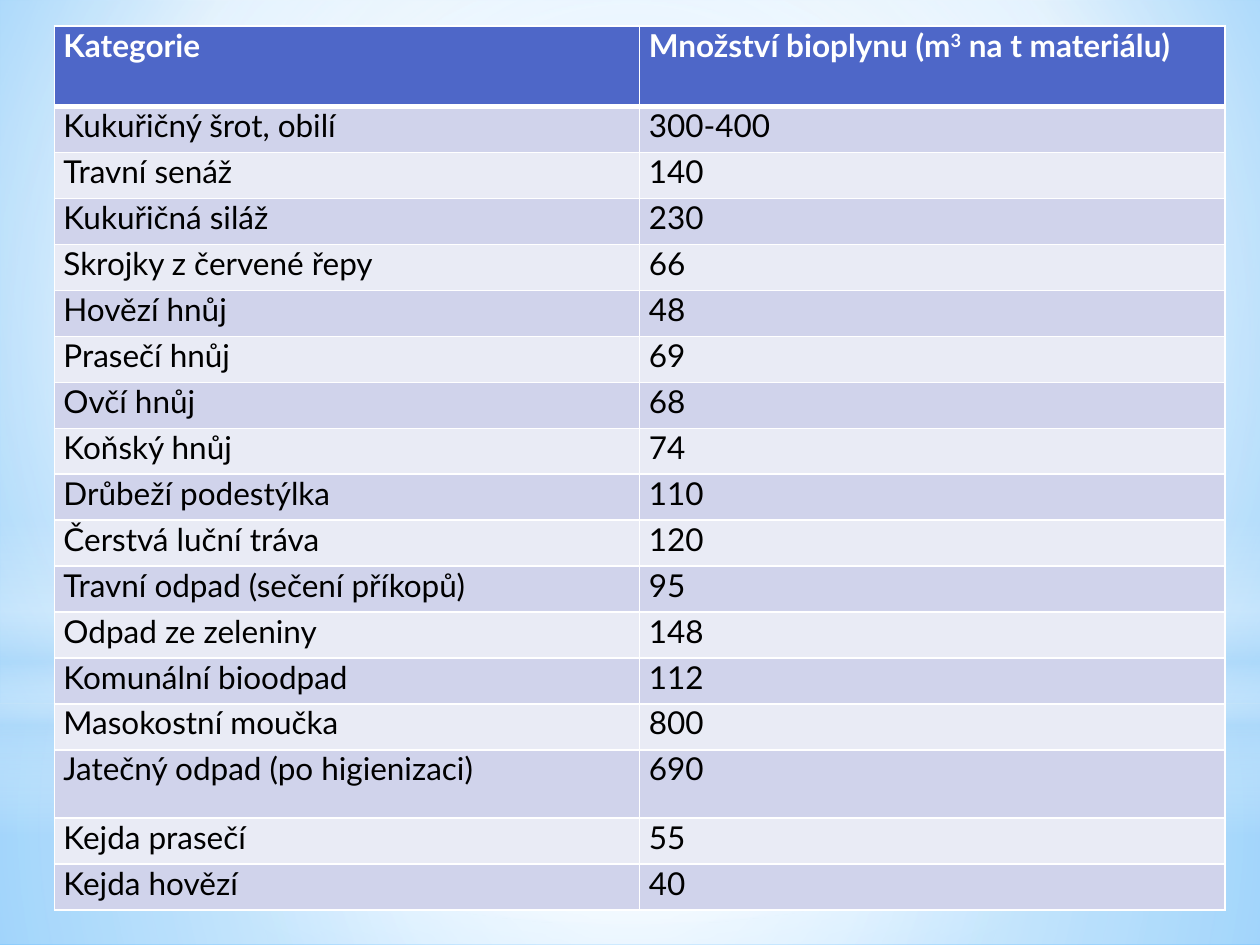
from dataclasses import dataclass
from typing import NamedTuple

from lxml import etree
from pptx import Presentation
from pptx.dml.color import RGBColor
from pptx.enum.shapes import MSO_SHAPE
from pptx.enum.text import PP_ALIGN
from pptx.oxml.ns import qn
from pptx.util import Pt

RECTANGLE = MSO_SHAPE.RECTANGLE
OVAL = MSO_SHAPE.OVAL
JUSTIFY = PP_ALIGN.JUSTIFY
BLANK_LAYOUT = 6


@dataclass(frozen=True)
class Theme:
    font: str = "Lato"
    text_size: float = 18
    header_text: str = "FFFFFF"
    body_text: str = "000000"
    header_fill: str = "4E67C8"
    band_fills: tuple[str, str] = ("D0D3EB", "E9EBF5")
    border: str = "FFFFFF"
    thin_border: float = 1
    thick_border: float = 3
    glow: str = "FFFFFF"
    haze: str = "B4DCFA"
    sky_light: str = "9ED5FF"
    sky_deep: str = "5BB9FF"


THEME = Theme()


class Stop(NamedTuple):
    position: int
    color: str
    opacity: int = 100


class Gradient(NamedTuple):
    """Circular around the focus (left, top, right, bottom in percent), or linear at angle."""
    stops: tuple[Stop, ...]
    focus: tuple[int, int, int, int] = (50, 50, 50, 50)
    angle: int | None = None


class Layer(NamedTuple):
    preset: MSO_SHAPE
    top: float
    height: float
    gradient: Gradient


class Material(NamedTuple):
    name: str
    biogas: str
    height: float = 26.25


SLIDE_WIDTH, SLIDE_HEIGHT = 720, 540
TABLE_LEFT, TABLE_TOP = 31, 15
COLUMN_WIDTH = 334.5
HEADER_HEIGHT = 46
CELL_MARGIN = 5.25

SKY = Gradient((Stop(0, THEME.sky_light), Stop(60, THEME.glow), Stop(100, THEME.sky_deep)),
               focus=(20, 10, 20, 60))

LAYERS = (
    Layer(RECTANGLE, 402, 138, Gradient((
        Stop(0, THEME.glow, 91), Stop(37, THEME.glow, 76), Stop(100, THEME.haze, 79)))),
    Layer(RECTANGLE, 0, 402, Gradient((
        Stop(0, THEME.glow, 89), Stop(48, THEME.glow, 62), Stop(100, THEME.haze, 79)))),
    Layer(RECTANGLE, 297, 180, Gradient((
        Stop(0, THEME.glow, 0), Stop(29, THEME.glow, 30), Stop(45, THEME.haze, 40),
        Stop(55, THEME.glow, 26), Stop(65, THEME.haze, 60), Stop(100, THEME.glow, 0)), angle=90)),
    Layer(OVAL, 126, 402, Gradient((Stop(0, THEME.glow), Stop(56, THEME.glow, 0)))),
)

# Each header is a list of (text, is superscript)
HEADERS = (
    [("Kategorie", False)],
    [("Množství bioplynu (m", False), ("3", True), (" na t materiálu)", False)],
)

MATERIALS = (
    Material("Kukuřičný šrot, obilí", "300-400"),
    Material("Travní senáž", "140"),
    Material("Kukuřičná siláž", "230"),
    Material("Skrojky z červené řepy", "66"),
    Material("Hovězí hnůj", "48"),
    Material("Prasečí hnůj", "69"),
    Material("Ovčí hnůj", "68"),
    Material("Koňský hnůj", "74"),
    Material("Drůbeží podestýlka", "110"),
    Material("Čerstvá luční tráva", "120"),
    Material("Travní odpad (sečení příkopů)", "95"),
    Material("Odpad ze zeleniny", "148"),
    Material("Komunální bioodpad", "112"),
    Material("Masokostní moučka", "800"),
    Material("Jatečný odpad (po higienizaci)", "690", height=39),
    Material("Kejda prasečí", "55"),
    Material("Kejda hovězí", "40"),
)


def add_element(parent, tag: str, **attributes):
    return etree.SubElement(parent, qn(tag), {key: str(value) for key, value in attributes.items()})


def apply_gradient(fill, owner, gradient: Gradient) -> None:
    """Fill with the gradient; owner is the XML element that holds the fill."""
    fill.gradient()
    element = owner.find(".//" + qn("a:gradFill"))
    for child in list(element):
        element.remove(child)
    stop_list = add_element(element, "a:gsLst")
    for stop in gradient.stops:
        stop_element = add_element(stop_list, "a:gs", pos=stop.position * 1000)
        color = add_element(stop_element, "a:srgbClr", val=stop.color)
        if stop.opacity < 100:
            add_element(color, "a:alpha", val=stop.opacity * 1000)
    if gradient.angle is not None:
        add_element(element, "a:lin", ang=gradient.angle * 60000, scaled=0)
    else:
        circle = add_element(element, "a:path", path="circle")
        sides = {side: value * 1000 for side, value in zip("ltrb", gradient.focus)}
        add_element(circle, "a:fillToRect", **sides)


def add_layer(slide, layer: Layer) -> None:
    shape = slide.shapes.add_shape(layer.preset, 0, Pt(layer.top), Pt(SLIDE_WIDTH), Pt(layer.height))
    shape.shadow.inherit = False
    shape.line.fill.background()
    apply_gradient(shape.fill, shape.element.spPr, layer.gradient)


def set_borders(cell, top: float, bottom: float) -> None:
    properties = cell._tc.get_or_add_tcPr()
    thin = THEME.thin_border
    widths = (("a:lnL", thin), ("a:lnR", thin), ("a:lnT", top), ("a:lnB", bottom))
    for tag, width in widths:
        line = add_element(properties, tag, w=int(Pt(width)))
        add_element(add_element(line, "a:solidFill"), "a:srgbClr", val=THEME.border)


def format_cell(cell, fill: str, text_color: str, bold: bool, top: float, bottom: float) -> None:
    set_borders(cell, top, bottom)
    cell.fill.solid()
    cell.fill.fore_color.rgb = RGBColor.from_string(fill)
    cell.margin_left = cell.margin_right = Pt(CELL_MARGIN)
    cell.margin_top = cell.margin_bottom = 0
    paragraph = cell.text_frame.paragraphs[0]
    paragraph.alignment = JUSTIFY
    font = paragraph.font
    font.name, font.size, font.bold = THEME.font, Pt(THEME.text_size), bold
    font.color.rgb = RGBColor.from_string(text_color)


def add_biogas_table(slide) -> None:
    heights = [HEADER_HEIGHT] + [material.height for material in MATERIALS]
    table = slide.shapes.add_table(
        len(heights), len(HEADERS), Pt(TABLE_LEFT), Pt(TABLE_TOP),
        Pt(COLUMN_WIDTH * len(HEADERS)), Pt(sum(heights))).table
    for column in table.columns:
        column.width = Pt(COLUMN_WIDTH)
    for row, height in zip(table.rows, heights):
        row.height = Pt(height)

    thin, thick = THEME.thin_border, THEME.thick_border
    for cell, parts in zip(table.rows[0].cells, HEADERS):
        for text, is_superscript in parts:
            run = cell.text_frame.paragraphs[0].add_run()
            run.text = text
            if is_superscript:
                run._r.get_or_add_rPr().set("baseline", "30000")
        format_cell(cell, THEME.header_fill, THEME.header_text, True, thin, thick)

    for index, material in enumerate(MATERIALS):
        top = thick if index == 0 else thin
        for cell, text in zip(table.rows[index + 1].cells, (material.name, material.biogas)):
            cell.text = text
            format_cell(cell, THEME.band_fills[index % 2], THEME.body_text, False, top, thin)


def main() -> None:
    presentation = Presentation()
    presentation.slide_width, presentation.slide_height = Pt(SLIDE_WIDTH), Pt(SLIDE_HEIGHT)
    slide = presentation.slides.add_slide(presentation.slide_layouts[BLANK_LAYOUT])
    apply_gradient(slide.background.fill, slide.element, SKY)
    for layer in LAYERS:
        add_layer(slide, layer)
    add_biogas_table(slide)
    presentation.save("out.pptx")


if __name__ == "__main__":
    main()
